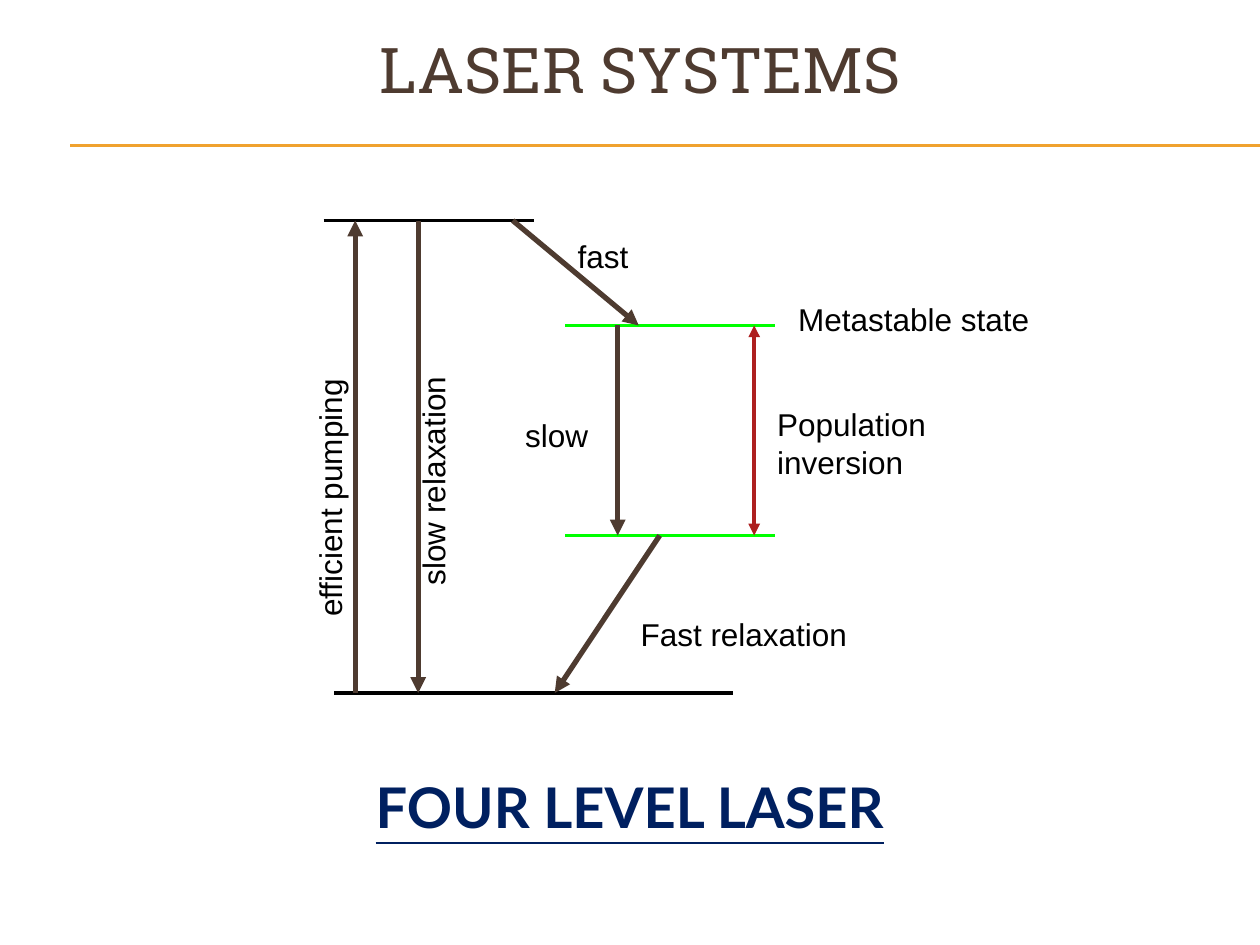
from dataclasses import dataclass

import pptx
import pptx.dml.color
import pptx.enum.shapes
import pptx.enum.text
import pptx.oxml.ns
import pptx.util
from lxml import etree

Pt = pptx.util.Pt
ALIGN = pptx.enum.text.PP_ALIGN
ANCHOR = pptx.enum.text.MSO_ANCHOR
qn = pptx.oxml.ns.qn


@dataclass(frozen=True)
class Theme:
    brown: str = "4E3B30"
    gold: str = "F0A22E"
    black: str = "000000"
    green: str = "00FF00"
    red: str = "AD1F1F"
    navy: str = "002060"
    title_font: str = "Roboto Slab"
    caption_font: str = "Lato"
    label_font: str = "Arial"
    title_size: float = 36
    caption_size: float = 32
    label_size: float = 18
    rule_width: float = 0.75
    level_width: float = 2.25
    arrow_width: float = 3


THEME = Theme()


def rgb(value):
    return pptx.dml.color.RGBColor.from_string(value)


def add_text(slide, text, box, *, font=THEME.label_font, size=THEME.label_size,
             color=THEME.black, bold=False, underline=False, align=ALIGN.LEFT,
             anchor=ANCHOR.TOP, rotation=0):
    shape = slide.shapes.add_textbox(*(Pt(length) for length in box))
    shape.rotation = rotation
    frame = shape.text_frame
    frame.word_wrap = True
    frame.vertical_anchor = anchor
    paragraph = frame.paragraphs[0]
    paragraph.alignment = align
    run = paragraph.add_run()
    run.text = text
    run.font.name = font
    run.font.size = Pt(size)
    run.font.bold = bold
    run.font.underline = underline
    run.font.color.rgb = rgb(color)


def add_line(slide, start, end, color, width, arrows=()):
    """Draw a straight line; arrows names its arrowheads, headEnd before tailEnd."""
    connector = slide.shapes.add_connector(
        pptx.enum.shapes.MSO_CONNECTOR.STRAIGHT,
        *(Pt(length) for length in (*start, *end)))
    connector.line.color.rgb = rgb(color)
    connector.line.width = Pt(width)
    properties = connector._element.spPr
    for arrow in arrows:
        etree.SubElement(properties.find(qn("a:ln")), qn(f"a:{arrow}"), type="triangle")
    etree.SubElement(properties, qn("a:effectLst"))


def add_header(slide, left, top, width, height):
    for rule_top in (top + 76.8, top + 77.4):
        add_line(slide, (left + 16.3, rule_top), (720, rule_top),
                 THEME.gold, THEME.rule_width)
    add_text(slide, "LASER SYSTEMS", (left, top, width, height),
             font=THEME.title_font, size=THEME.title_size, color=THEME.brown,
             align=ALIGN.CENTER, anchor=ANCHOR.MIDDLE)


def add_energy_diagram(slide, left, top):
    """Draw the energy levels, the transitions between them and their labels."""
    pumped, metastable, lower, ground = 0, 60, 180, 270

    levels = [
        (6, 234, ground, THEME.black),
        (0, 120, pumped, THEME.black),
        (138, 258, metastable, THEME.green),
        (138, 258, lower, THEME.green),
    ]
    for start, end, level, color in levels:
        add_line(slide, (left + start, top + level), (left + end, top + level),
                 color, THEME.level_width)

    transitions = [
        (18, ground, 18, pumped),
        (54, pumped, 54, ground),
        (108, pumped, 180, metastable),
        (168, metastable, 168, lower),
        (192, lower, 132, ground),
    ]
    for start, from_level, end, to_level in transitions:
        add_line(slide, (left + start, top + from_level), (left + end, top + to_level),
                 THEME.brown, THEME.arrow_width, ("tailEnd",))
    add_line(slide, (left + 246, top + metastable), (left + 246, top + lower),
             THEME.red, THEME.level_width, ("headEnd", "tailEnd"))

    labels = [
        ("efficient pumping", -83.5, 132, 174, 29, 270),
        ("slow relaxation", -24.5, 114, 174, 29, 270),
        ("Metastable state", 264, 42, 174, 29, 0),
        ("fast", 138, 6, 60, 29, 0),
        ("slow", 108, 108, 60, 29, 0),
        ("Population inversion", 252, 102, 114, 50, 0),
        ("Fast relaxation", 174, 222, 174, 29, 0),
    ]
    for text, x, y, width, height, rotation in labels:
        add_text(slide, text, (left + x, top + y, width, height), rotation=rotation)


def add_caption(slide, left, top, width, height):
    add_text(slide, "FOUR LEVEL LASER", (left, top, width, height),
             font=THEME.caption_font, size=THEME.caption_size, color=THEME.navy,
             bold=True, underline=True, align=ALIGN.CENTER, anchor=ANCHOR.BOTTOM)


def main():
    presentation = pptx.Presentation()
    presentation.slide_width = Pt(720)
    presentation.slide_height = Pt(540)
    slide = presentation.slides.add_slide(presentation.slide_layouts[6])
    add_header(slide, 24, 6, 684, 66)
    add_energy_diagram(slide, 185, 126)
    add_caption(slide, 36, 433.5, 648, 50)
    presentation.save("out.pptx")


if __name__ == "__main__":
    main()
